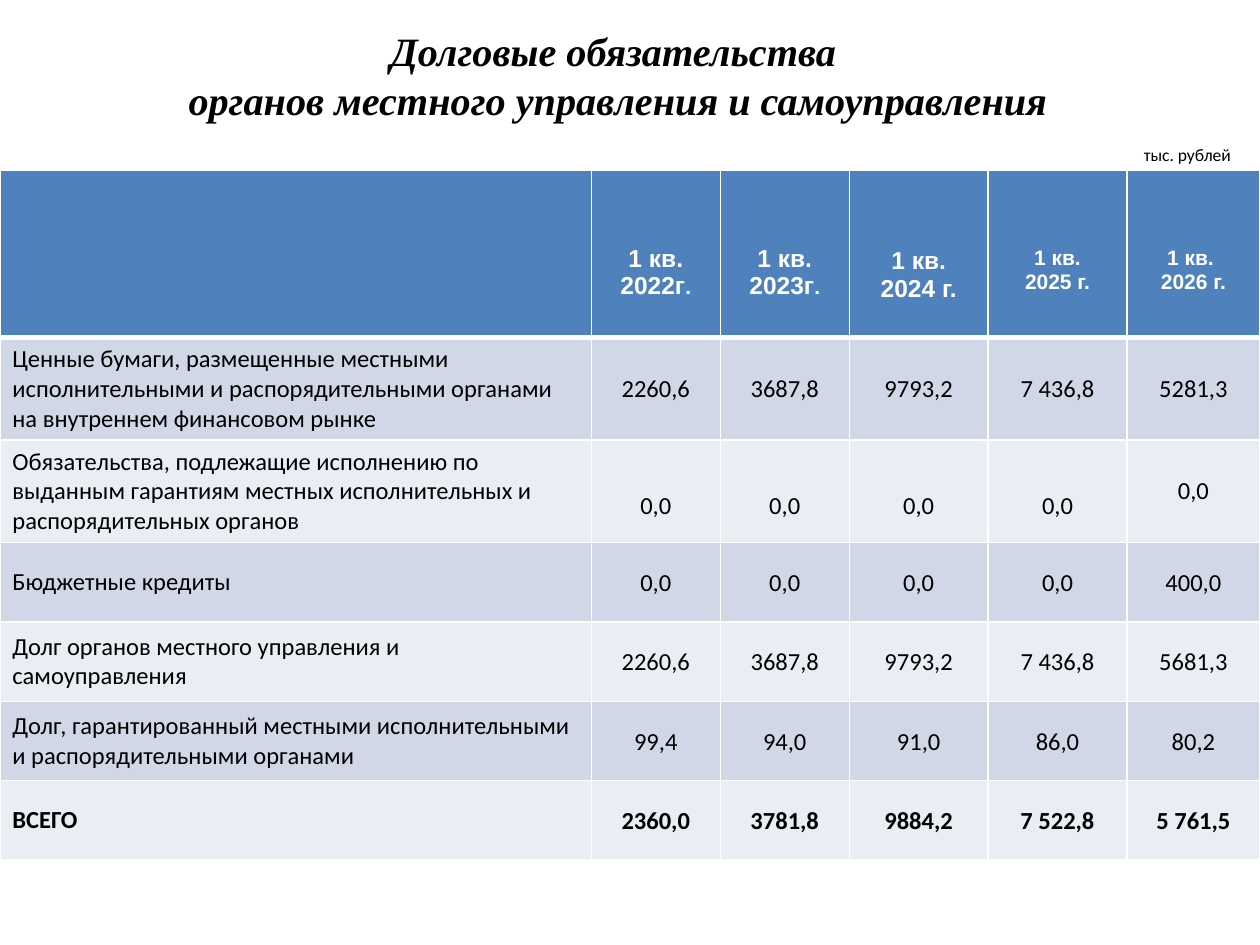
from lxml.etree import SubElement
from pptx import Presentation
from pptx.dml.color import RGBColor
from pptx.enum.text import MSO_ANCHOR, MSO_AUTO_SIZE, PP_ALIGN
from pptx.oxml.ns import qn
from pptx.util import Cm, Pt

BLACK = RGBColor(0x00, 0x00, 0x00)
WHITE = RGBColor(0xFF, 0xFF, 0xFF)
HEADER_BLUE = RGBColor(0x4F, 0x81, 0xBD)
BAND_DARK = RGBColor(0xD0, 0xD8, 0xE8)
BAND_LIGHT = RGBColor(0xE9, 0xED, 0xF4)

COLUMN_WIDTHS = [11.92, 2.6, 2.6, 2.8, 2.8, 2.68]
ROW_HEIGHTS = [3.38, 2.03, 2.03, 1.6, 1.6, 1.6, 1.6]
WIDE_MARGINS = (0.25, 0.13, 0.25, 0.13)
NARROW_MARGINS = (0.03, 0.03, 0.03, 0)
LOWERED_MARGINS = (0.25, 0.74, 0.25, 0.13)

QUARTERS = [
    ([[("1 кв. 2022г", 14), (".", 12)]], 0.75),
    ([[("1 кв. 2023г", 14), (".", 12)]], 0.75),
    ([[("1 кв.", 14)], [("2024 г.", 14)]], 0.85),
    ([[("1 кв.", 12)], [("2025 г.", 12)]], 0.65),
    ([[("1 кв. ", 12)], [("2026 г.", 12)]], 0.65),
]
DEBTS = [
    ("Ценные бумаги, размещенные местными исполнительными и распорядительными "
     "органами на внутреннем финансовом рынке",
     ["2260,6", "3687,8", "9793,2", "7 436,8", "5281,3"], WIDE_MARGINS),
    ("Обязательства, подлежащие исполнению по выданным гарантиям местных "
     "исполнительных и распорядительных органов",
     ["0,0", "0,0", "0,0", "0,0", "0,0"], LOWERED_MARGINS),
    ("Бюджетные кредиты",
     ["0,0", "0,0", "0,0", "0,0", "400,0"], NARROW_MARGINS),
    ("Долг органов местного управления и самоуправления",
     ["2260,6", "3687,8", "9793,2", "7 436,8", "5681,3"], NARROW_MARGINS),
    ("Долг, гарантированный местными исполнительными и распорядительными органами",
     ["99,4", "94,0", "91,0", "86,0", "80,2"], NARROW_MARGINS),
    ("ВСЕГО",
     ["2360,0", "3781,8", "9884,2", "7 522,8", "5 761,5"], NARROW_MARGINS),
]


def set_font(font, name, size, color, bold=False, italic=False):
    font.name = name
    font.size = Pt(size)
    font.bold = bold
    font.italic = italic
    font.color.rgb = color


def set_borders(cell, top=1, bottom=1):
    properties = cell._tc.get_or_add_tcPr()
    widths = {"a:lnL": 1, "a:lnR": 1, "a:lnT": top, "a:lnB": bottom}
    for tag, width in widths.items():
        line = SubElement(properties, qn(tag), w=str(Pt(width)))
        fill = SubElement(line, qn("a:solidFill"))
        SubElement(fill, qn("a:srgbClr"), val=str(WHITE))


def format_cell(cell, color, margins, top=1, bottom=1):
    set_borders(cell, top, bottom)
    cell.fill.solid()
    cell.fill.fore_color.rgb = color
    cell.vertical_anchor = MSO_ANCHOR.MIDDLE
    (cell.margin_left, cell.margin_top,
     cell.margin_right, cell.margin_bottom) = map(Cm, margins)


def fill_header_cell(cell, lines, lowering):
    left, top, right, bottom = WIDE_MARGINS
    format_cell(cell, HEADER_BLUE, (left, top + lowering, right, bottom), bottom=3)
    frame = cell.text_frame
    for index, line in enumerate(lines):
        paragraph = frame.add_paragraph() if index else frame.paragraphs[0]
        paragraph.alignment = PP_ALIGN.CENTER
        for text, size in line:
            run = paragraph.add_run()
            run.text = text
            set_font(run.font, "Arial", size, WHITE, bold=True)


def fill_body_cell(cell, text, alignment, bold):
    cell.text = text
    paragraph = cell.text_frame.paragraphs[0]
    paragraph.alignment = alignment
    set_font(paragraph.font, "Calibri", 14, BLACK, bold)


def add_title(slide, left, top, width, height):
    title = slide.shapes.title
    title.left, title.top, title.width, title.height = map(Cm, (left, top, width, height))
    frame = title.text_frame
    frame.text = "Долговые обязательства \vорганов местного управления и самоуправления"
    frame.vertical_anchor = MSO_ANCHOR.MIDDLE
    paragraph = frame.paragraphs[0]
    paragraph.alignment = PP_ALIGN.CENTER
    set_font(paragraph.font, "Times New Roman", 23, BLACK, bold=True, italic=True)


def add_unit_label(slide, left, top, width, height):
    label = slide.shapes.add_textbox(*map(Cm, (left, top, width, height)))
    frame = label.text_frame
    frame.word_wrap = False
    frame.auto_size = MSO_AUTO_SIZE.SHAPE_TO_FIT_TEXT
    frame.text = "тыс. рублей"
    set_font(frame.paragraphs[0].font, "Calibri", 10, BLACK)


def add_debt_table(slide, left, top):
    box = map(Cm, (left, top, sum(COLUMN_WIDTHS), sum(ROW_HEIGHTS)))
    table = slide.shapes.add_table(len(ROW_HEIGHTS), len(COLUMN_WIDTHS), *box).table
    for column, width in zip(table.columns, COLUMN_WIDTHS):
        column.width = Cm(width)
    for row, height in zip(table.rows, ROW_HEIGHTS):
        row.height = Cm(height)

    format_cell(table.cell(0, 0), HEADER_BLUE, WIDE_MARGINS, bottom=3)
    for column, (lines, lowering) in enumerate(QUARTERS, 1):
        fill_header_cell(table.cell(0, column), lines, lowering)

    for row, (name, values, margins) in enumerate(DEBTS, 1):
        color = BAND_DARK if row % 2 else BAND_LIGHT
        bold = row == len(DEBTS)
        top_border = 3 if row == 1 else 1
        for column, text in enumerate([name, *values]):
            cell = table.cell(row, column)
            raised = margins == LOWERED_MARGINS and column == len(values)
            cell_margins = WIDE_MARGINS if column == 0 or raised else margins
            format_cell(cell, color, cell_margins, top=top_border)
            alignment = PP_ALIGN.CENTER if column else PP_ALIGN.LEFT
            fill_body_cell(cell, text, alignment, bold)


def main():
    presentation = Presentation()
    presentation.slide_width = Cm(25.4)
    presentation.slide_height = Cm(19.05)
    slide = presentation.slides.add_slide(presentation.slide_layouts[5])
    add_debt_table(slide, 0, 3.43)
    add_title(slide, 1.04, -0.08, 22.86, 3.18)
    add_unit_label(slide, 22.81, 2.77, 2.29, 0.69)
    presentation.save("out.pptx")


if __name__ == "__main__":
    main()
